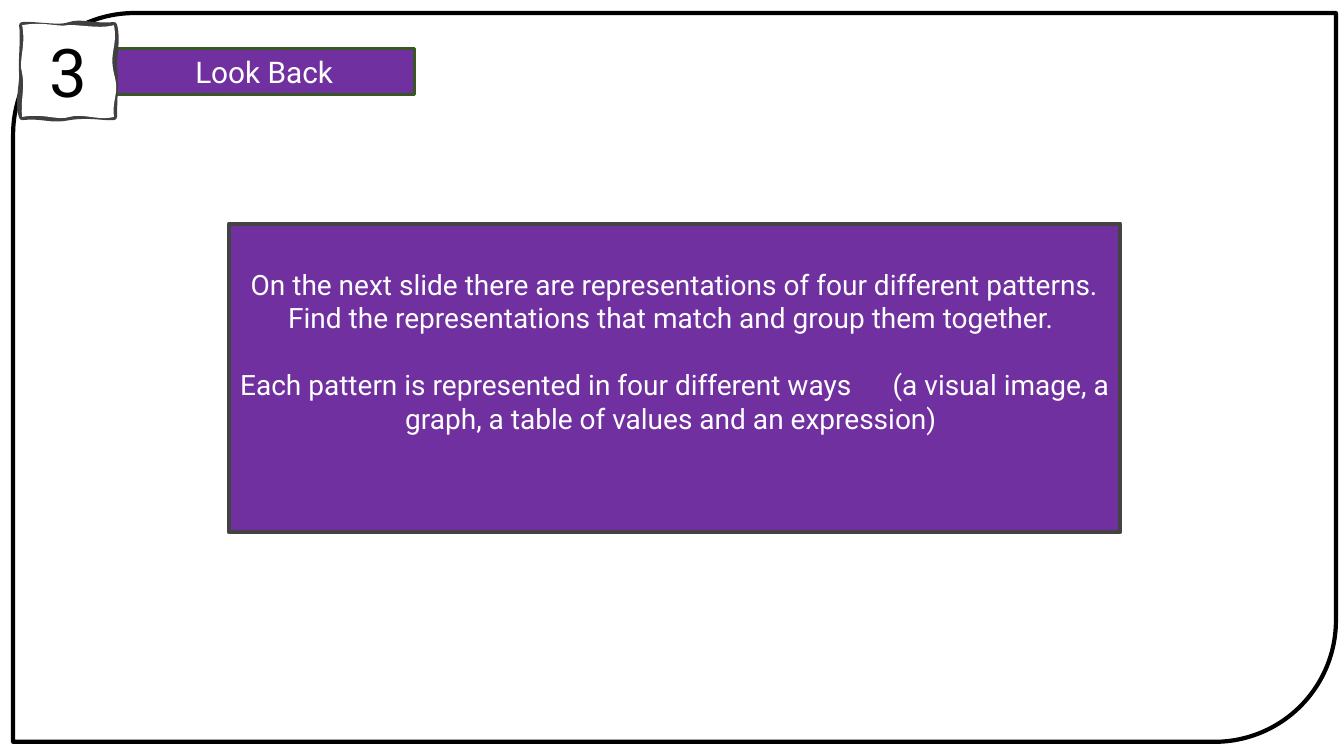
from lxml import etree
from pptx import Presentation
from pptx.dml.color import RGBColor
from pptx.enum import shapes, text
from pptx.oxml.ns import qn
from pptx.util import Inches, Pt

PURPLE, WHITE, BLACK = "7030A0", "FFFFFF", "000000"

# Torn paper in hundredths of an inch from its top left corner.
# Each edge starts at the previous end: two control points, then the end point.
PAPER_SIDE = 91
TORN_OUTLINE = [
    (14, -1, 37, 4, 47, 0), (58, -4, 71, 2, 91, 0),
    (95, 15, 90, 34, 91, 43), (93, 52, 91, 70, 91, 91),
    (81, 92, 68, 88, 47, 91), (27, 95, 23, 89, 0, 91),
    (-5, 79, 1, 57, 0, 47), (-1, 37, 2, 10, 0, 0),
]
TORN_FILL = [
    (21, -4, 35, 2, 45, 0), (55, -1, 77, 4, 91, 0),
    (95, 21, 86, 26, 91, 48), (97, 69, 89, 71, 91, 91),
    (75, 95, 60, 87, 47, 91), (35, 95, 21, 87, 0, 91),
    (-2, 76, 3, 62, 0, 48), (-4, 34, 4, 22, 0, 0),
]


def colour(value):
    return RGBColor.from_string(value)


def place(box, left, top, width, height):
    box.left, box.top = Inches(left), Inches(top)
    box.width, box.height = Inches(width), Inches(height)


def paint(box, fill=None, line=None, weight=1):
    """Fill and outline a shape; without a fill it stays clear."""
    if fill:
        box.fill.solid()
        box.fill.fore_color.rgb = colour(fill)
    else:
        box.fill.background()
    box.line.color.rgb = colour(line)
    box.line.width = Pt(weight)


def write(box, paragraphs, size, color, anchor=text.MSO_ANCHOR.MIDDLE,
          inset=(0.1, 0.05, 0.1, 0.05), gap=0):
    """Write centred paragraphs, each given as (text, letter spacing) spans."""
    frame = box.text_frame
    frame.word_wrap = True
    frame.auto_size = text.MSO_AUTO_SIZE.NONE
    frame.vertical_anchor = anchor
    (frame.margin_left, frame.margin_top,
     frame.margin_right, frame.margin_bottom) = map(Inches, inset)
    for index, spans in enumerate(paragraphs):
        para = frame.add_paragraph() if index else frame.paragraphs[0]
        para.alignment = text.PP_ALIGN.CENTER
        para.space_before = Pt(gap if index else 0)
        properties = para._p.get_or_add_pPr()
        properties.set("marL", "0")
        properties.set("indent", "0")
        etree.SubElement(properties, qn("a:buNone"))
        for words, spacing in spans:
            span = para.add_run()
            span.text = words
            span.font.name = "Roboto"
            span.font.size = Pt(size)
            span.font.color.rgb = colour(color)
            if spacing:
                span._r.get_or_add_rPr().set("spc", str(spacing * 100))


def add_curve(outlines, edges, **options):
    """Add one closed outline of cubic curves that starts at the corner."""
    outline = etree.SubElement(outlines, qn("a:path"), w=str(PAPER_SIDE),
                               h=str(PAPER_SIDE), **options)
    start = etree.SubElement(outline, qn("a:moveTo"))
    etree.SubElement(start, qn("a:pt"), x="0", y="0")
    for edge in edges:
        curve = etree.SubElement(outline, qn("a:cubicBezTo"))
        for x, y in zip(edge[::2], edge[1::2]):
            etree.SubElement(curve, qn("a:pt"), x=str(x), y=str(y))
    etree.SubElement(outline, qn("a:close"))


def add_torn_paper(page, left, top):
    """Build a square, then swap its straight sides for curved ones."""
    side = PAPER_SIDE
    builder = page.shapes.build_freeform(0, 0, scale=Inches(0.01))
    builder.add_line_segments([(side, 0), (side, side), (0, side)], close=True)
    paper = builder.convert_to_shape(Inches(left), Inches(top))
    paper.shadow.inherit = False
    outlines = paper._element.spPr.find(".//" + qn("a:pathLst"))
    for straight in list(outlines):
        outlines.remove(straight)
    add_curve(outlines, TORN_OUTLINE, fill="none")
    add_curve(outlines, TORN_FILL, stroke="0")
    return paper


def main():
    deck = Presentation()
    deck.slide_width, deck.slide_height = Inches(13.33), Inches(7.5)
    page = deck.slides.add_slide(deck.slide_layouts[1])

    # Page frame
    frame = page.shapes.add_shape(shapes.MSO_SHAPE.ROUND_2_DIAG_RECTANGLE,
                                  Inches(0.13), Inches(0.13), Inches(13.12), Inches(7.23))
    frame.shadow.inherit = False
    paint(frame, line=BLACK, weight=3)

    # Heading bar
    title = page.shapes.title
    place(title, 1.13, 0.48, 2.98, 0.46)
    paint(title, PURPLE, "385723", 2.25)
    write(title, [[("Look Back", 0)]], 21.3, WHITE)

    # Number on torn paper
    paper = add_torn_paper(page, 0.22, 0.25)
    paint(paper, WHITE, "404040", 4.5)
    write(paper, [[("3", 0)]], 48, BLACK)

    # Instructions
    body = page.placeholders[1]
    place(body, 2.27, 2.22, 8.84, 3.06)
    paint(body, PURPLE, "434343", 3)
    write(body, [
        [("On the next slide there are representations of four different patterns. "
          "Find the representations that match and group them together. ", 0)],
        [("Each pattern is represented in four different ways", 0), (" ", 24),
         ("(a visual image, a graph, a table of values and an expression) ", 0)],
    ], 20, WHITE, anchor=text.MSO_ANCHOR.TOP, inset=(0.1, 0.43, 0.1, 0.1), gap=24)

    deck.save("out.pptx")


if __name__ == "__main__":
    main()
